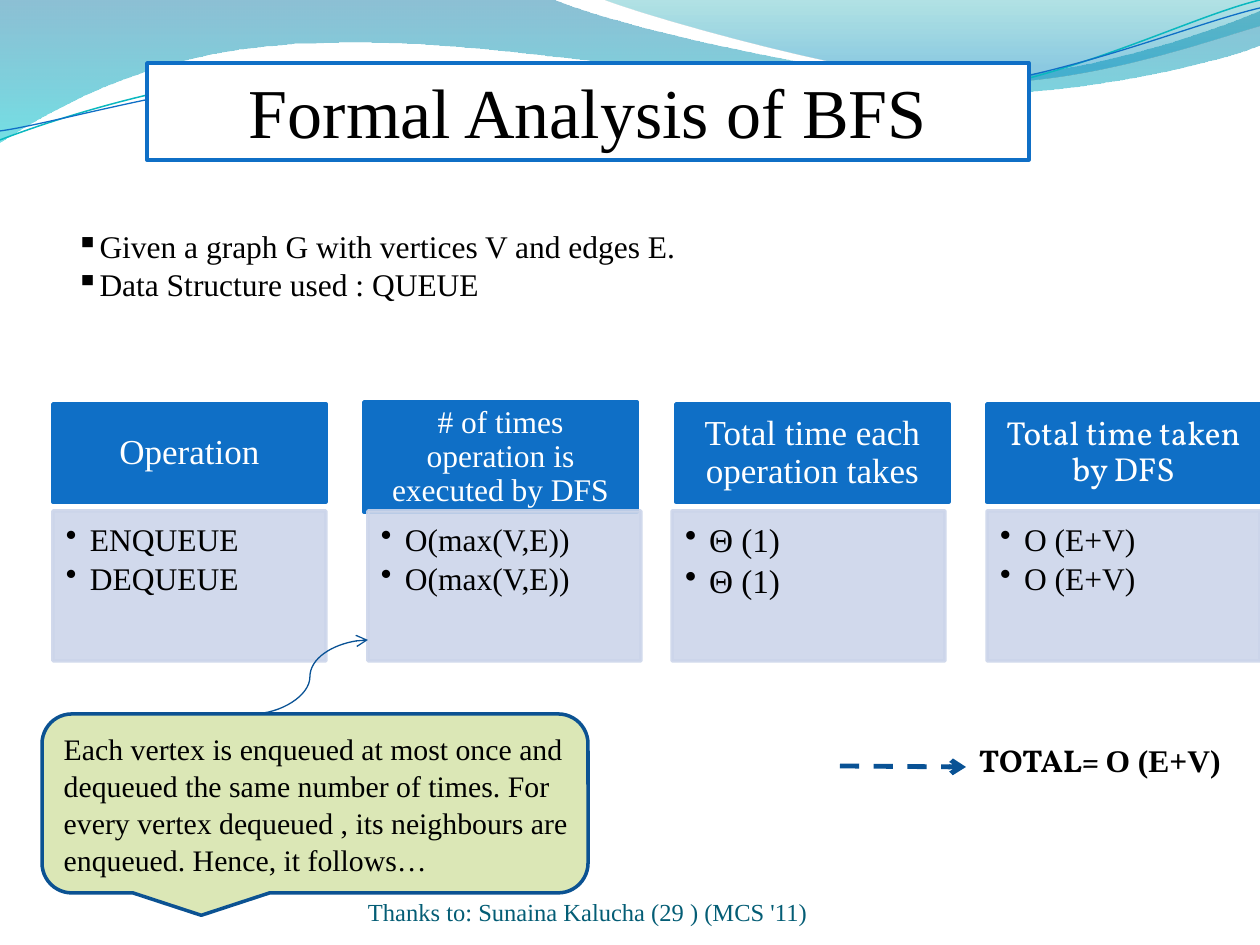
from dataclasses import dataclass
from typing import NamedTuple

from lxml.etree import SubElement
from pptx import Presentation
from pptx.dml.color import RGBColor
from pptx.enum.dml import MSO_LINE
from pptx.enum.shapes import MSO_CONNECTOR, MSO_SHAPE
from pptx.enum.text import MSO_ANCHOR, PP_ALIGN
from pptx.oxml.ns import qn
from pptx.util import Pt

EMU_PER_PX = 914400 / 126


class Box(NamedTuple):
    left: int
    top: int
    width: int
    height: int


@dataclass(frozen=True)
class Theme:
    serif: str = "Times New Roman"
    accent_font: str = "Vollkorn"
    white: str = "FFFFFF"
    black: str = "000000"
    blue: str = "0F6FC6"
    panel: str = "CCD5EA"
    navy: str = "0B5292"
    arrow: str = "095295"
    green: str = "DBE7B6"
    credit: str = "045D75"
    teal: str = "0AB8BF"
    title_size: int = 40
    heading_size: int = 20
    body_size: int = 18
    callout_size: int = 17
    credit_size: int = 14


THEME = Theme()
GRADIENT_WAVES = [
    ([(0, 0), (554, 0), (600, 21, 837, 79, 955, 79), (1075, 79, 1207, 33, 1260, 11),
      (1260, 45), (1239, 55, 1096, 96, 940, 95), (784, 95, 481, 35, 324, 43),
      (163, 45, 58, 105, 0, 142)],
     [(0, "0074A1", 45), (1, "00C6CF", 55)]),
    ([(604, 0), (641, 15, 859, 78, 969, 82), (1079, 87, 1211, 40, 1260, 26), (1260, 0)],
     [(0, "00A1A9", 30), (0.8, "008BBF", 45)]),
]
LINE_WAVES = [
    ([(0, 140), (60, 117, 199, 72, 349, 66), (498, 59, 747, 112, 898, 101),
      (1050, 91, 1182, 19, 1260, 0)], THEME.teal, 0.85),
    ([(0, 131), (59, 123, 207, 77, 357, 71), (508, 64, 752, 106, 903, 95),
      (1053, 84, 1184, 26, 1260, 8)], THEME.blue, 0.75),
]


def px(length):
    return round(length * EMU_PER_PX)


def color(value):
    return RGBColor.from_string(value)


def set_alpha(parent, percents):
    for element, percent in zip(parent.iter(qn("a:srgbClr")), percents):
        SubElement(element, qn("a:alpha"), val=str(percent * 1000))


def add_panel(slide, box, fill, line, preset=MSO_SHAPE.RECTANGLE):
    shape = slide.shapes.add_shape(preset, *map(px, box))
    shape.shadow.inherit = False
    shape.fill.solid()
    shape.fill.fore_color.rgb = color(fill)
    shape.line.color.rgb = color(line)
    shape.line.width = Pt(2)
    return shape


def write(shape, text, size, ink=THEME.black, font=THEME.serif, align=PP_ALIGN.LEFT,
          anchor=MSO_ANCHOR.TOP, insets=(13, 6, 13, 6)):
    frame = shape.text_frame
    frame.text = text
    frame.word_wrap = True
    frame.vertical_anchor = anchor
    frame.margin_left, frame.margin_top, frame.margin_right, frame.margin_bottom = map(px, insets)
    for paragraph in frame.paragraphs:
        paragraph.alignment = align
        for run in paragraph.runs:
            run.font.name = font
            run.font.size = Pt(size)
            run.font.color.rgb = color(ink)
    return frame.paragraphs


def add_bullets(paragraphs, character, indent=0):
    for paragraph in paragraphs:
        properties = paragraph._p.get_or_add_pPr()
        properties.set("marL", str(px(indent)))
        properties.set("indent", str(px(-indent)))
        SubElement(properties, qn("a:buChar"), char=character)


def add_wave(slide, box, points):
    start, *segments = points
    builder = slide.shapes.build_freeform(*start, scale=EMU_PER_PX)
    builder.add_line_segments([segment[-2:] for segment in segments], close=False)
    shape = builder.convert_to_shape(px(box.left), px(box.top))
    shape.shadow.inherit = False
    left = min(point[-2] for point in points)
    top = min(point[-1] for point in points)
    for element, segment in zip(list(shape.element.iter(qn("a:lnTo"))), segments):
        if len(segment) == 6:
            element.tag = qn("a:cubicBezTo")
            element.clear()
            for x, y in zip(segment[::2], segment[1::2]):
                SubElement(element, qn("a:pt"), x=str(x - left), y=str(y - top))
    return shape


def add_backdrop(slide, box):
    for points, stops in GRADIENT_WAVES:
        shape = add_wave(slide, box, points)
        shape.line.fill.background()
        shape.fill.gradient()
        shape.fill.gradient_angle = 270
        for stop, (position, tone, _) in zip(shape.fill.gradient_stops, stops):
            stop.position = position
            stop.color.rgb = color(tone)
        set_alpha(shape.element.spPr, [percent for _, _, percent in stops])
    for points, tone, width in LINE_WAVES:
        shape = add_wave(slide, box, points)
        shape.fill.background()
        shape.line.color.rgb = color(tone)
        shape.line.width = Pt(width)


def add_title(slide, box):
    shape = add_panel(slide, box, THEME.white, THEME.blue)
    write(shape, "Formal Analysis of BFS", THEME.title_size, align=PP_ALIGN.CENTER)


def add_premises(slide, box):
    shape = slide.shapes.add_textbox(*map(px, box))
    text = "Given a graph G with vertices V and edges E.\nData Structure used : QUEUE"
    add_bullets(write(shape, text, THEME.body_size), "▪")


def add_column(slide, header_box, body_box, heading, items, heading_size, item_size, font):
    header = add_panel(slide, header_box, THEME.blue, THEME.blue)
    paragraphs = write(header, heading, heading_size, THEME.white, font, PP_ALIGN.CENTER,
                       MSO_ANCHOR.MIDDLE, (18, 10, 18, 10))
    paragraphs[0].line_spacing = 0.9
    body = add_panel(slide, body_box, THEME.panel, THEME.panel)
    set_alpha(body.element.spPr, [90, 90])
    paragraphs = write(body, "\n".join(items), item_size, insets=(13, 13, 18, 20))
    for paragraph in paragraphs:
        paragraph.line_spacing = 0.9
        paragraph.space_after = Pt(3)
    add_bullets(paragraphs, "•", 24)


def add_operations(slide, box):
    large, small = THEME.heading_size, THEME.body_size
    columns = [
        ("Operation", ["ENQUEUE", "DEQUEUE"], large, small, THEME.serif, 0, 2, 98),
        ("# of times operation is executed by DFS", ["O(max(V,E))"] * 2,
         small, small, THEME.serif, 4, 0, 110),
        ("Total time each operation takes", ["Θ (1)"] * 2, large, 19, THEME.serif, -4, 2, 98),
        ("Total time taken by DFS", ["O (E+V)"] * 2, 19, small, THEME.accent_font, 0, 2, 98),
    ]
    width = 273
    pitch = (box.width - width) / (len(columns) - 1)
    for index, (*content, shift, drop, height) in enumerate(columns):
        left = round(box.left + index * pitch)
        header_box = Box(left, box.top + drop, width, height)
        body_box = Box(left + shift, box.top + 109, width, 150)
        add_column(slide, header_box, body_box, *content)


def add_callout(slide, box):
    shape = add_panel(slide, box, THEME.green, THEME.navy, MSO_SHAPE.ROUNDED_RECTANGULAR_CALLOUT)
    text = ("Each vertex is enqueued at most once and dequeued the same number of times. "
            "For every vertex dequeued , its neighbours are enqueued. Hence, it follows…")
    paragraphs = write(shape, text, THEME.callout_size, anchor=MSO_ANCHOR.MIDDLE,
                       insets=(13, 6, 8, 6))
    paragraphs[0].line_spacing = 1.04


def add_total(slide, box):
    shape = slide.shapes.add_textbox(*map(px, box))
    paragraph = write(shape, "TOTAL= ", THEME.body_size, font=THEME.accent_font)[0]
    paragraph.add_run().text = "O (E+V)"
    label, value = paragraph.runs
    value.font.name = THEME.serif
    value.font.size = Pt(THEME.body_size)
    value.font.color.rgb = color(THEME.black)
    label.font.bold = value.font.bold = True


def add_credit(slide, box):
    shape = slide.shapes.add_textbox(*map(px, box))
    write(shape, "Thanks to: Sunaina Kalucha (29 ) (MCS '11)", THEME.credit_size,
          THEME.credit, anchor=MSO_ANCHOR.BOTTOM, insets=(0, 0, 0, 0))


def add_arrow(slide, kind, ends, width, dash=None):
    connector = slide.shapes.add_connector(kind, *map(px, ends))
    connector.line.color.rgb = color(THEME.arrow)
    connector.line.width = Pt(width)
    connector.line.dash_style = dash
    SubElement(connector.line._get_or_add_ln(), qn("a:tailEnd"), type="arrow")
    SubElement(connector.element.spPr, qn("a:effectLst"))


def main():
    presentation = Presentation()
    presentation.slide_width, presentation.slide_height = px(1260), px(945)
    slide = presentation.slides.add_slide(presentation.slide_layouts[6])
    add_backdrop(slide, Box(0, 0, 1260, 142))
    add_title(slide, Box(147, 63, 882, 97))
    add_operations(slide, Box(53, 402, 1207, 259))
    add_premises(slide, Box(63, 221, 777, 89))
    add_total(slide, Box(966, 735, 294, 89))
    add_credit(slide, Box(368, 876, 462, 50))
    add_callout(slide, Box(42, 714, 546, 179))
    add_arrow(slide, MSO_CONNECTOR.CURVE, (252, 714, 368, 640), 0.75)
    add_arrow(slide, MSO_CONNECTOR.STRAIGHT, (840, 766, 966, 767), 2.75, MSO_LINE.DASH)
    presentation.save("out.pptx")


if __name__ == "__main__":
    main()
